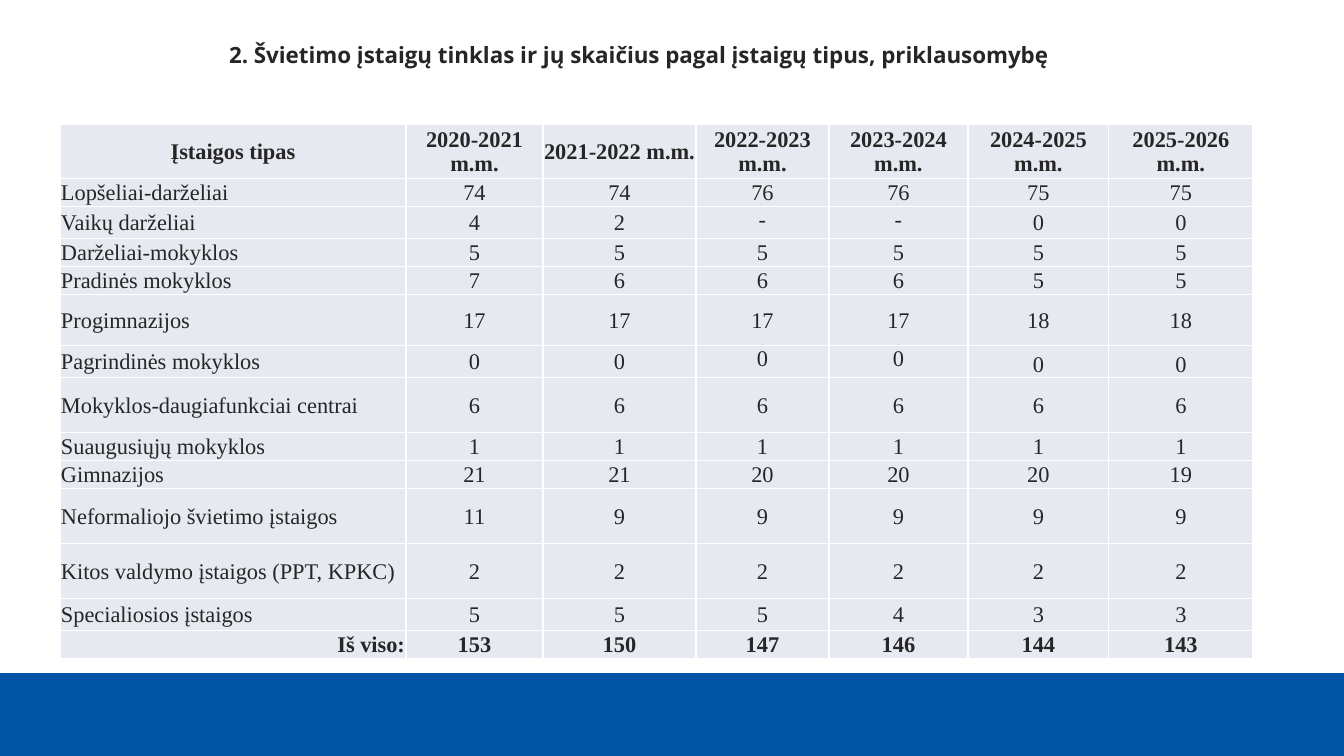
from lxml import etree
from pptx import Presentation
from pptx import util as u
from pptx.dml import color
from pptx.enum import shapes, text
from pptx.oxml import ns

PX = 914400 / 100.8  # EMU in one px
INK = color.RGBColor(0x26, 0x26, 0x26)
BLUE = color.RGBColor(0x00, 0x54, 0xA5)
PALE = color.RGBColor(0xE7, 0xE9, 0xF0)
WHITE = color.RGBColor(0xFF, 0xFF, 0xFF)

LEFT, CENTER, RIGHT = text.PP_ALIGN.LEFT, text.PP_ALIGN.CENTER, text.PP_ALIGN.RIGHT
TOP, MIDDLE, BOTTOM = text.MSO_ANCHOR.TOP, text.MSO_ANCHOR.MIDDLE, text.MSO_ANCHOR.BOTTOM

TITLE = "2. Švietimo įstaigų tinklas ir jų skaičius pagal įstaigų tipus, priklausomybę"
COLUMN_WIDTHS = [346, 137, 153, 133, 139, 141, 144]
HEADER = ["Įstaigos tipas"] + [f"{year}-{year + 1} m.m." for year in range(2020, 2026)]
# Row height, institution type, count in each school year
ROWS = [
    (53, *HEADER),
    (28, "Lopšeliai-darželiai", 74, 74, 76, 76, 75, 75),
    (32, "Vaikų darželiai", 4, 2, "-", "-", 0, 0),
    (28, "Darželiai-mokyklos", 5, 5, 5, 5, 5, 5),
    (28, "Pradinės mokyklos", 7, 6, 6, 6, 5, 5),
    (51, "Progimnazijos", 17, 17, 17, 17, 18, 18),
    (32, "Pagrindinės mokyklos", 0, 0, 0, 0, 0, 0),
    (55, "Mokyklos-daugiafunkciai centrai", 6, 6, 6, 6, 6, 6),
    (28, "Suaugusiųjų mokyklos", 1, 1, 1, 1, 1, 1),
    (27, "Gimnazijos", 21, 21, 20, 20, 20, 19),
    (55, "Neformaliojo švietimo įstaigos", 11, 9, 9, 9, 9, 9),
    (55, "Kitos valdymo įstaigos (PPT, KPKC)", 2, 2, 2, 2, 2, 2),
    (32, "Specialiosios įstaigos", 5, 5, 5, 4, 3, 3),
    (27, "Iš viso:", 153, 150, 147, 146, 144, 143),
]
# Cells, by row and column, that are not anchored in the middle
ANCHORS = {(2, 3): TOP, (2, 4): TOP, (6, 3): TOP, (6, 4): TOP,
           (6, 5): BOTTOM, (6, 6): BOTTOM}


def px(length):
    return u.Emu(round(length * PX))


def write(frame, words, font="Times New Roman", size=16, bold=False, align=LEFT):
    para = frame.paragraphs[0]
    para.alignment = align
    span = para.add_run()
    span.text = words
    span.font.name = font
    span.font.size = u.Pt(size)
    span.font.bold = bold
    span.font.color.rgb = INK


def add_border(cell):
    properties = cell._tc.get_or_add_tcPr()
    for side in ("lnL", "lnR", "lnT", "lnB"):
        line = etree.SubElement(properties, ns.qn(f"a:{side}"), w=str(u.Pt(1)))
        fill = etree.SubElement(line, ns.qn("a:solidFill"))
        etree.SubElement(fill, ns.qn("a:srgbClr"), val=str(WHITE))


def add_band(page, left, top, width, height):
    band = page.shapes.add_shape(shapes.MSO_SHAPE.RECTANGLE,
                                 px(left), px(top), px(width), px(height))
    band.shadow.inherit = False
    band.fill.solid()
    band.fill.fore_color.rgb = BLUE
    band.line.fill.background()


def place_title(page, left, top, width, height):
    box = page.shapes.title
    box.left, box.top, box.width, box.height = px(left), px(top), px(width), px(height)
    frame = box.text_frame
    frame.word_wrap = False
    frame.auto_size = text.MSO_AUTO_SIZE.SHAPE_TO_FIT_TEXT
    frame.vertical_anchor = TOP
    write(frame, TITLE, font="Open Sans", bold=True)


def fill_cell(cell, words, anchor, **style):
    cell.margin_left = cell.margin_right = cell.margin_top = px(1)
    cell.margin_bottom = 0
    cell.vertical_anchor = anchor
    add_border(cell)
    cell.fill.solid()
    cell.fill.fore_color.rgb = PALE
    write(cell.text_frame, words, **style)


def add_counts(page, left, top):
    width, height = sum(COLUMN_WIDTHS), sum(row[0] for row in ROWS)
    table = page.shapes.add_table(len(ROWS), len(COLUMN_WIDTHS), px(left), px(top),
                                  px(width), px(height)).table
    table.first_row = table.horz_banding = False
    for column, column_width in zip(table.columns, COLUMN_WIDTHS):
        column.width = px(column_width)
    last = len(ROWS) - 1
    for i, (row_height, *values) in enumerate(ROWS):
        table.rows[i].height = px(row_height)
        for j, value in enumerate(values):
            if j > 0 or i == 0:
                align = CENTER
            else:
                align = RIGHT if i == last else LEFT
            fill_cell(table.cell(i, j), str(value), ANCHORS.get((i, j), MIDDLE),
                      bold=i in (0, last), align=align)


def main():
    deck = Presentation()
    deck.slide_width, deck.slide_height = px(1344), px(756)
    page = deck.slides.add_slide(deck.slide_layouts[5])  # Title Only
    add_band(page, 0, 673, 1344, 83)
    add_counts(page, 60, 124)
    place_title(page, 219, 36, 850, 37)
    deck.save("out.pptx")


if __name__ == "__main__":
    main()
